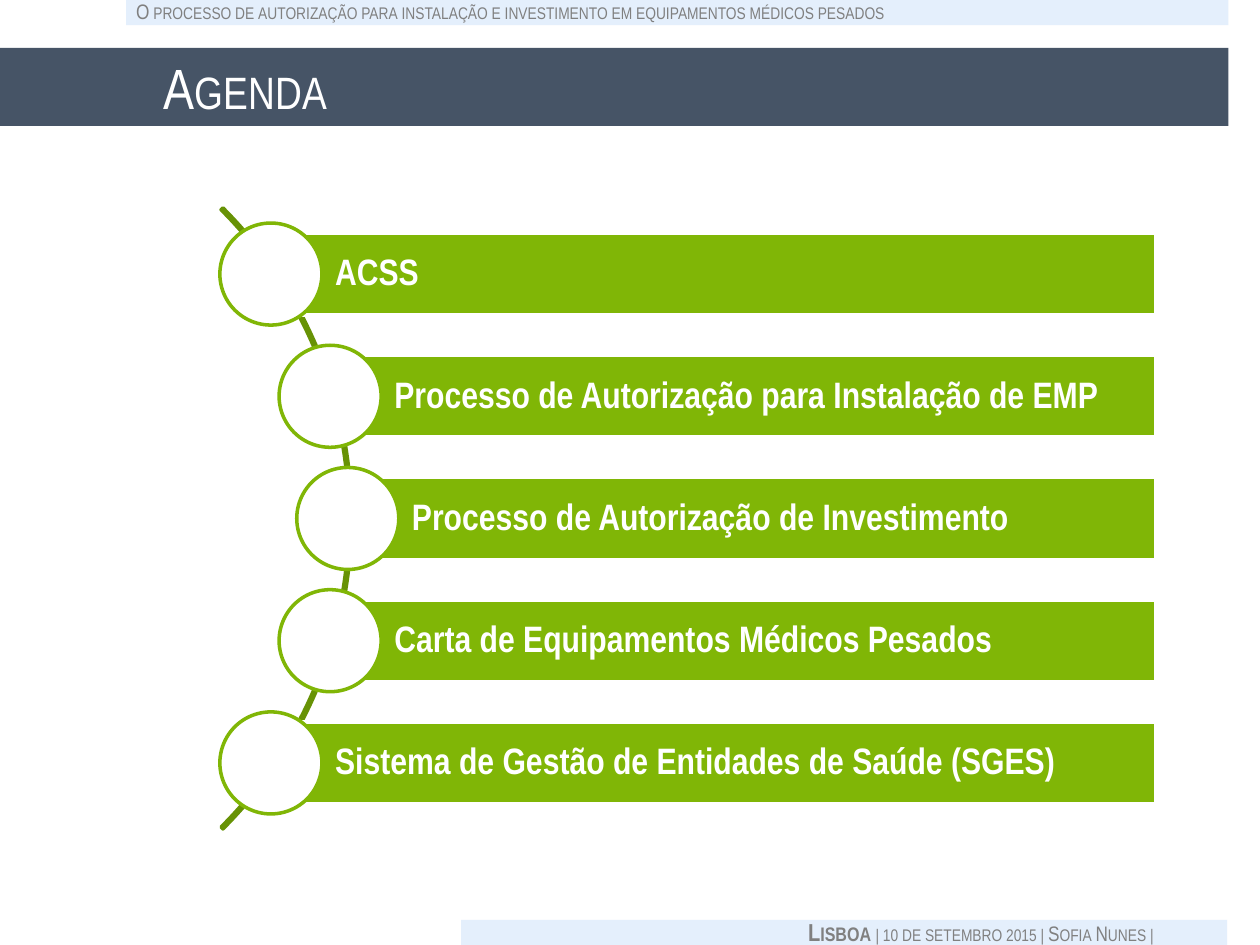
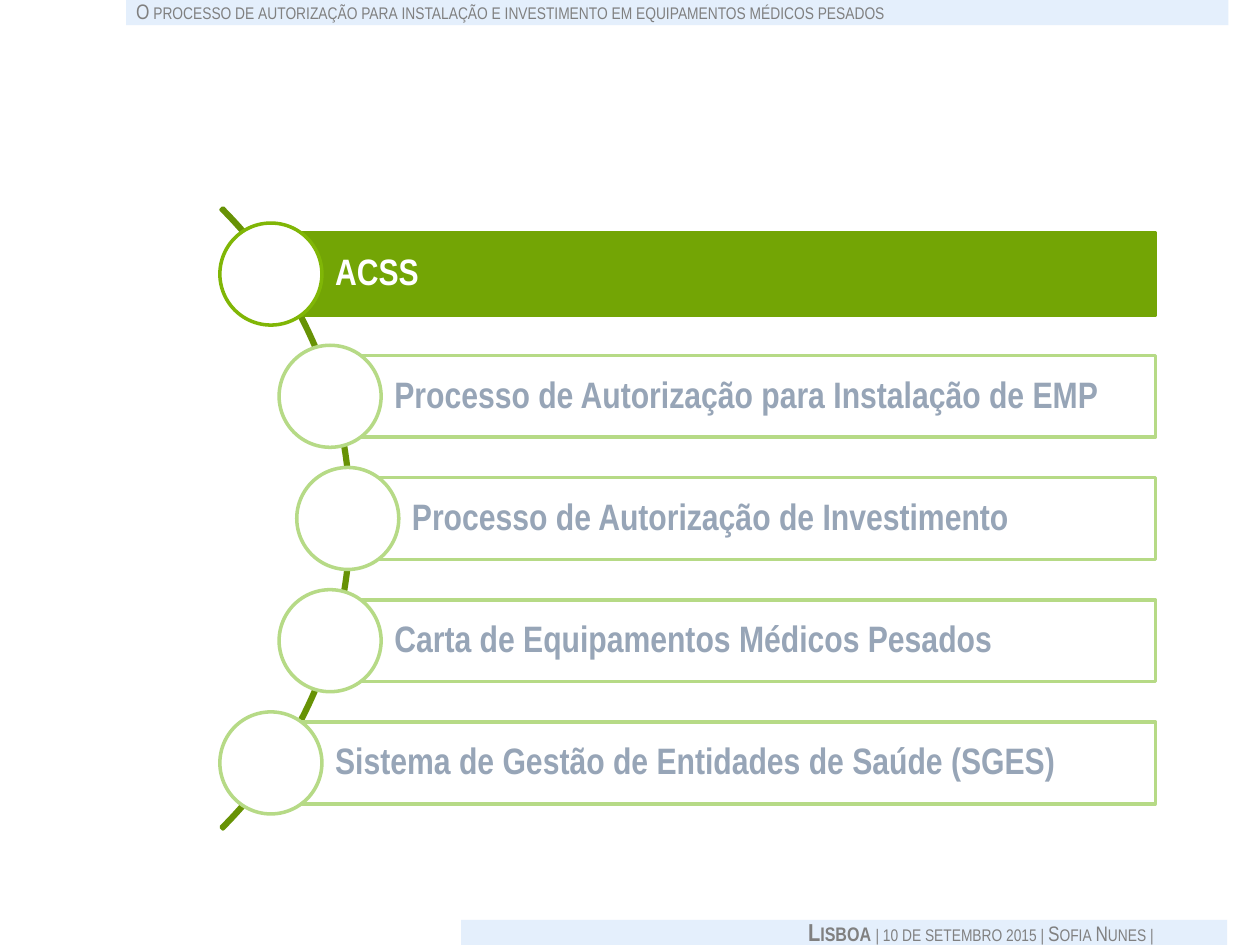
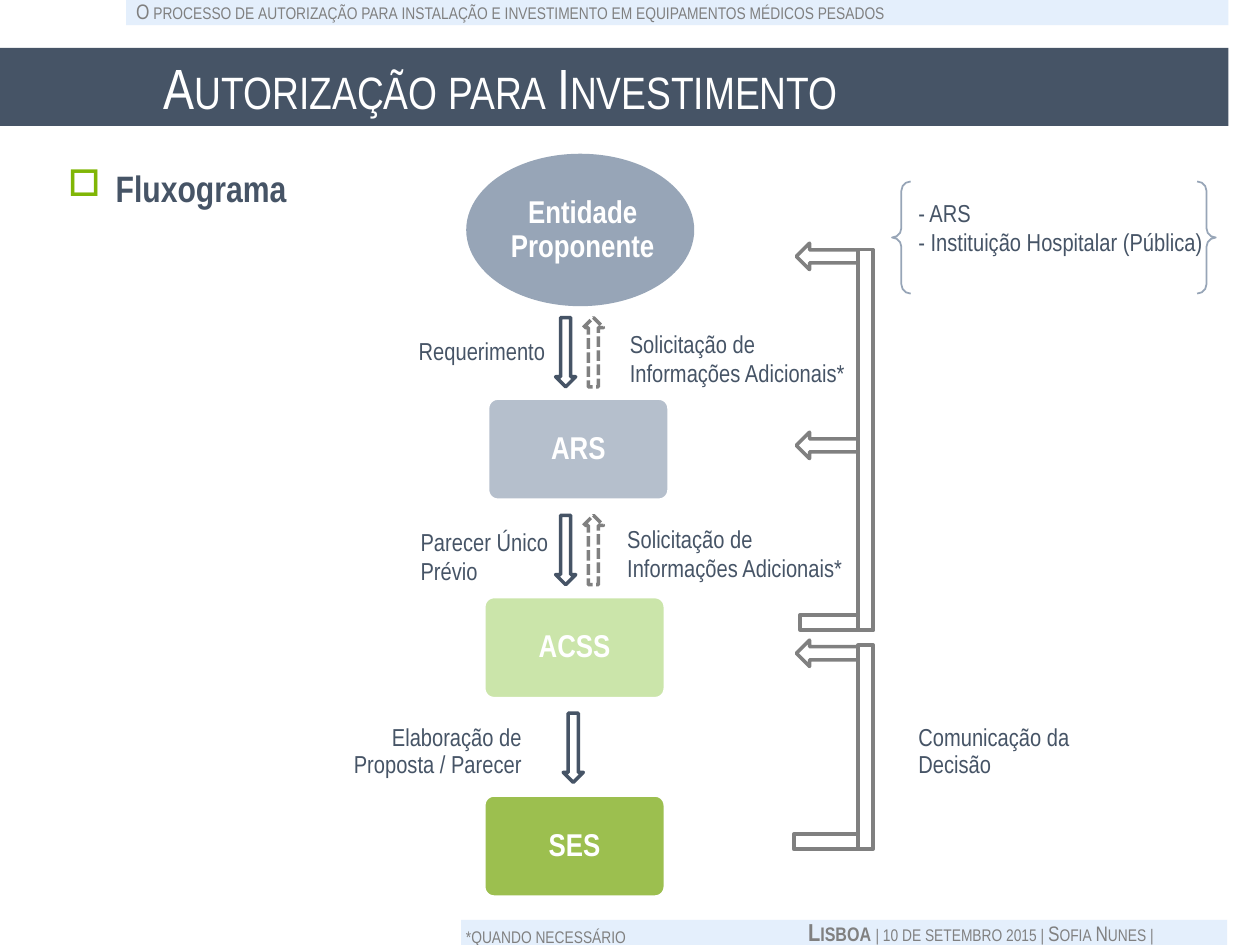
from dataclasses import dataclass

from lxml.etree import SubElement
from pptx import Presentation
from pptx.dml.color import RGBColor
from pptx.enum.dml import MSO_LINE_DASH_STYLE as Dash
from pptx.enum.shapes import MSO_AUTO_SHAPE_TYPE as Kind
from pptx.enum.text import MSO_ANCHOR as Anchor, PP_ALIGN as Align
from pptx.oxml.ns import qn
from pptx.util import Inches, Pt

COLUMNS, ROWS = 100, 75


@dataclass(frozen=True)
class Theme:
    font: str = "Arial Narrow"
    white: str = "FFFFFF"
    band: str = "E4EFFC"
    slate: str = "465466"
    steel: str = "97A5B7"
    gray: str = "808080"
    green: str = "80B606"
    arc_green: str = "679205"
    dark_green: str = "73A505"
    pale_green: str = "B6DA86"
    title: float = 32.4
    item: int = 21
    node: int = 18
    label: int = 14
    small: int = 12
    stroke: int = 2


THEME = Theme()
TOPICS = (
    (21.5, "ACSS"),
    (26.2, "Processo de Autorização para Instalação de EMP"),
    (27.6, "Processo de Autorização de Investimento"),
    (26.2, "Carta de Equipamentos Médicos Pesados"),
    (21.5, "Sistema de Gestão de Entidades de Saúde (SGES)"),
)


class Deck:
    def __init__(self, theme):
        self.theme = theme
        self.presentation = Presentation()
        self.presentation.slide_width = Inches(10)
        self.presentation.slide_height = Inches(7.5)
        self.column = self.presentation.slide_width / COLUMNS
        self.row = self.presentation.slide_height / ROWS
        self.slide = None

    def frame(self, area):
        left, top, width, height = area
        return (round(left * self.column), round(top * self.row),
                round(width * self.column), round(height * self.row))

    def new_slide(self, title=None):
        theme = self.theme
        self.slide = self.presentation.slides.add_slide(self.presentation.slide_layouts[6])
        self.shape(Kind.RECTANGLE, (10, 0, 87.5, 2), theme.band)
        self.shape(Kind.RECTANGLE, (36.6, 73, 60.8, 2), theme.band)
        self.footer()
        self.text((9.2, -0.6, 62.6, 3),
                  "O processo de autorização para instalação e investimento em equipamentos médicos pesados",
                  theme.small, theme.gray, align=Align.CENTER, wrap=False, small_caps=True)
        if title:
            bar = self.shape(Kind.RECTANGLE, (0, 3.8, 97.5, 6.2), theme.slate)
            self.fill_text(bar, title, theme.title, theme.white, anchor=Anchor.MIDDLE,
                           insets=(1.3, 0.05, 0.3, 0.05), small_caps=True)

    def footer(self):
        theme = self.theme
        box = self.slide.shapes.add_textbox(*self.frame((56, 72.3, 44, 3.4)))
        box.text_frame.word_wrap = True
        paragraph = box.text_frame.paragraphs[0]
        paragraph.alignment = Align.CENTER
        self.style(paragraph, None, theme.gray, small_caps=True)
        for words, size, bold in (("Lisboa ", theme.label, True),
                                  ("| 10 de setembro 2015 | Sofia Nunes | ", theme.small, False)):
            run = paragraph.add_run()
            run.text = words
            run.font.size, run.font.bold = Pt(size), bold

    def shape(self, kind, area, fill=None, line=None, opacity=100, adjustments=(), dash=None,
              weight=None):
        shape = self.slide.shapes.add_shape(kind, *self.frame(area))
        shape.shadow.inherit = False
        for index, value in enumerate(adjustments):
            shape.adjustments[index] = value
        if fill:
            shape.fill.solid()
            shape.fill.fore_color.rgb = RGBColor.from_string(fill)
            if opacity < 100:
                color = shape._element.spPr.find(qn("a:solidFill"))[0]
                SubElement(color, qn("a:alpha"), val=str(opacity * 1000))
        else:
            shape.fill.background()
        if line:
            shape.line.color.rgb = RGBColor.from_string(line)
            shape.line.width = Pt(weight or self.theme.stroke)
            if dash:
                shape.line.dash_style = dash
        else:
            shape.line.fill.background()
        return shape

    def style(self, paragraph, size, color, bold=None, small_caps=False):
        font = paragraph.font
        font.name = self.theme.font
        font.color.rgb = RGBColor.from_string(color)
        font.bold = bold
        if size:
            font.size = Pt(size)
        if small_caps:
            paragraph._p.get_or_add_pPr().find(qn("a:defRPr")).set("cap", "small")

    def fill_text(self, shape, words, size, color, bold=None, align=Align.LEFT,
                  anchor=Anchor.TOP, insets=(0.1, 0.05, 0.1, 0.05), spacing=None, wrap=True,
                  small_caps=False, bullet=None):
        frame = shape.text_frame
        frame.word_wrap = wrap
        frame.vertical_anchor = anchor
        (frame.margin_left, frame.margin_top,
         frame.margin_right, frame.margin_bottom) = map(Inches, insets)
        frame.text = words
        for paragraph in frame.paragraphs:
            paragraph.alignment = align
            if bullet:
                self.add_bullet(paragraph, bullet)
            if spacing:
                paragraph.line_spacing = spacing
            self.style(paragraph, size, color, bold, small_caps)

    def add_bullet(self, paragraph, symbol):
        properties = paragraph._p.get_or_add_pPr()
        indent = Inches(0.38)
        properties.set("marL", str(indent))
        properties.set("indent", str(-indent))
        color = SubElement(properties, qn("a:buClr"))
        SubElement(color, qn("a:srgbClr"), val=self.theme.green)
        SubElement(properties, qn("a:buChar"), char=symbol)

    def text(self, area, words, size, color, **options):
        box = self.slide.shapes.add_textbox(*self.frame(area))
        self.fill_text(box, words, size, color, **options)

    def label(self, area, words, **options):
        self.text(area, words, self.theme.label, self.theme.slate, **options)

    def node(self, kind, area, words, fill, **options):
        shape = self.shape(kind, area, fill, **options)
        self.fill_text(shape, words, self.theme.node, self.theme.white, bold=True,
                       align=Align.CENTER, anchor=Anchor.MIDDLE, spacing=0.9,
                       insets=(0.05, 0.01, 0.01, 0.01) if kind == Kind.OVAL else (0, 0, 0, 0))

    def topic_list(self, active=None):
        theme = self.theme
        self.shape(Kind.BLOCK_ARC, (-41.8, 6.3, 69.7, 69.7), line=theme.arc_green,
                   adjustments=(189, 27, 0.003))
        for index, (left, words) in enumerate(TOPICS):
            if active is None:
                fill, edge, ring, ink = theme.green, theme.white, theme.green, theme.white
            elif index == active:
                fill, edge, ring, ink = theme.dark_green, theme.dark_green, theme.green, theme.white
            else:
                fill, edge, ring, ink = theme.white, theme.pale_green, theme.pale_green, theme.steel
            top = 18.5 + 9.7 * index
            bar = self.shape(Kind.RECTANGLE, (left, top, 91.7 - left, 6.5), fill, edge)
            self.fill_text(bar, words, theme.item, ink, bold=True, anchor=Anchor.MIDDLE,
                           insets=(0.51, 0.06, 0.06, 0.06), spacing=0.9)
            self.shape(Kind.OVAL, (left - 4.05, top - 0.8, 8.1, 8.1), theme.white, ring)

    def flow_nodes(self):
        theme = self.theme
        self.node(Kind.OVAL, (37, 12.2, 18.1, 12.1), "Entidade Proponente", theme.steel)
        for index, (left, words, fill) in enumerate((
                (38.7, "ARS", theme.steel),
                (38.4, "ACSS", theme.pale_green),
                (38.4, "SES", theme.dark_green))):
            self.node(Kind.ROUNDED_RECTANGLE, (left, 31.6 + 15.75 * index, 14.4, 8.1), words, fill,
                      line=theme.white, opacity=70, adjustments=(0.1,))

    def flow_arrows(self):
        theme = self.theme
        for index, left in enumerate((44.1, 44.1, 44.7)):
            top = 25.2 + 15.7 * index
            self.shape(Kind.DOWN_ARROW, (left, top, 1.6, 5.5), theme.white, theme.slate)
            if index < 2:
                self.shape(Kind.UP_ARROW, (46.3, top, 1.6, 5.5), theme.white, theme.gray,
                           dash=Dash.SQUARE_DOT)

    def return_path(self, top, height, foot_left, arrow_tops):
        theme = self.theme
        self.shape(Kind.RECTANGLE, (foot_left, top + height - 1.2, 5.8, 1.2),
                   theme.white, theme.gray)
        for arrow_top in arrow_tops:
            self.shape(Kind.LEFT_ARROW, (63.2, arrow_top, 5.5, 2.1), theme.white, theme.gray)
        self.shape(Kind.RECTANGLE, (68.1, top, 1.2, height), theme.white, theme.gray)

    def flow_labels(self):
        theme = self.theme
        self.shape(Kind.DOUBLE_BRACE, (70.8, 14.4, 25.7, 8.9), line=theme.steel, weight=1)
        self.label((71.9, 15.2, 26.6, 5.7), "- ARS\n- Instituição Hospitalar (Pública)")
        self.label((32.2, 26.4, 12.1, 3.1), "Requerimento", align=Align.CENTER, spacing=0.9,
                   wrap=False)
        self.label((32.4, 41.3, 12.7, 5.7), "Parecer Único\nPrévio")
        self.label((25.1, 57.1, 17.3, 5.3), "Elaboração de Proposta / Parecer",
                   align=Align.RIGHT, spacing=0.9)
        self.label((71.9, 57.1, 16.2, 5.3), "Comunicação da Decisão", spacing=0.9)
        for left, top in ((49, 25.6), (48.8, 41.1)):
            self.label((left, top, 20.6, 5.7), "Solicitação de Informações Adicionais*")
        self.text((36, 72.7, 33, 2.3), "*quando necessário", theme.small, theme.gray,
                  small_caps=True)


def main():
    deck = Deck(THEME)

    deck.new_slide("Agenda")
    deck.topic_list()

    deck.new_slide()
    deck.topic_list(active=0)

    deck.new_slide("Autorização para Investimento")
    deck.text((4.4, 12.7, 30, 5), "Fluxograma", THEME.item, THEME.slate, bold=True, bullet="□")
    deck.flow_nodes()
    deck.flow_arrows()
    deck.return_path(51.2, 16.2, 63, (50.8,))
    deck.return_path(19.8, 30.2, 63.5, (19.3, 34.3))
    deck.flow_labels()

    deck.presentation.save("out.pptx")


if __name__ == "__main__":
    main()
